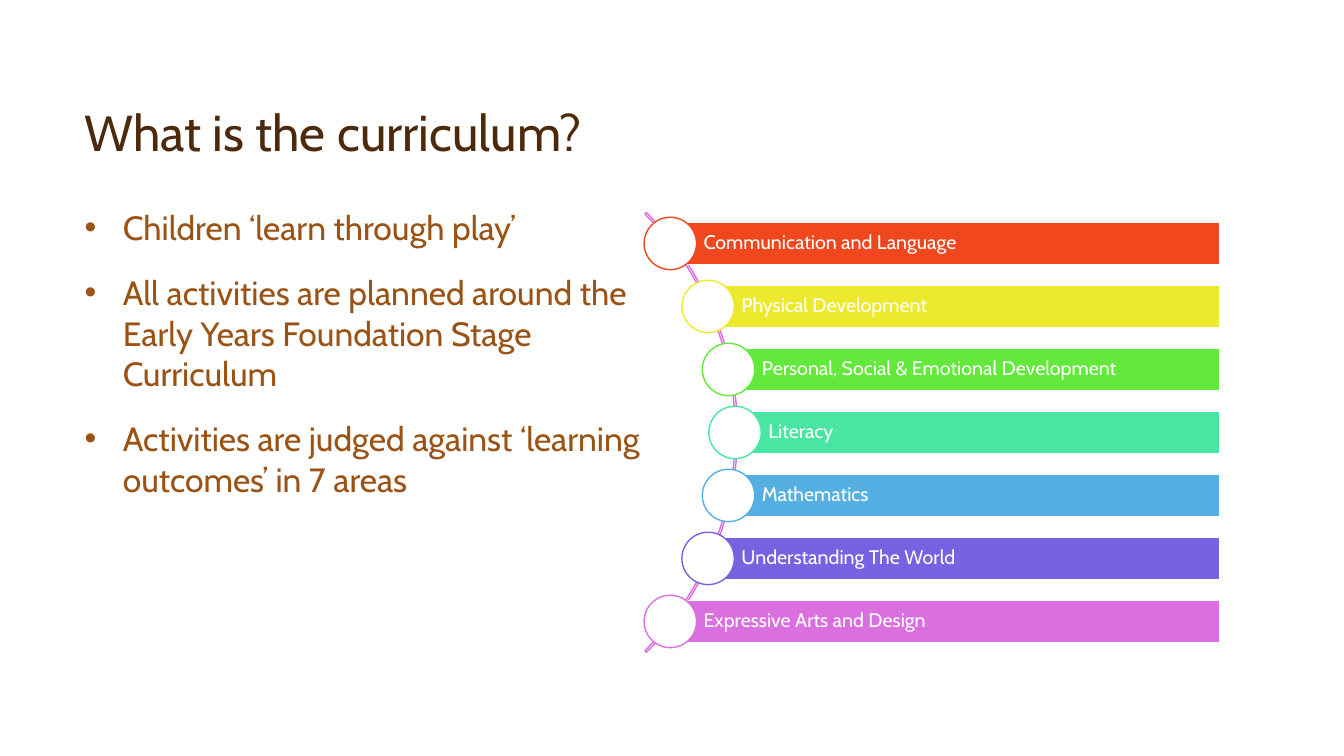
from math import sqrt
from lxml.etree import SubElement
from pptx import Presentation
from pptx.dml.color import RGBColor
from pptx.enum.shapes import MSO_SHAPE as SHAPE
from pptx.enum.text import MSO_ANCHOR as ANCHOR, PP_ALIGN as ALIGN
from pptx.oxml.ns import qn
from pptx.util import Inches, Pt

WHITE = RGBColor(0xFF, 0xFF, 0xFF)
DARK_BROWN = RGBColor(0x4D, 0x2A, 0x0B)
BROWN = RGBColor(0x9A, 0x53, 0x15)
RED = RGBColor(0xF1, 0x47, 0x1F)
YELLOW = RGBColor(0xED, 0xEA, 0x2D)
GREEN = RGBColor(0x62, 0xE9, 0x3B)
MINT = RGBColor(0x49, 0xE6, 0xA3)
BLUE = RGBColor(0x56, 0xAF, 0xE3)
VIOLET = RGBColor(0x77, 0x63, 0xE1)
PINK = RGBColor(0xDA, 0x6F, 0xDF)

prs = Presentation()
prs.slide_width, prs.slide_height = Inches(13.33), Inches(7.5)
s = prs.slides.add_slide(prs.slide_layouts[6])


def add_shape(kind, box, fill, line):
    sp = s.shapes.add_shape(kind, *map(Inches, box))
    sp.shadow.inherit = False
    if fill is None:
        sp.fill.background()
    else:
        sp.fill.solid()
        sp.fill.fore_color.rgb = fill
    sp.line.color.rgb = line
    sp.line.width = Pt(1)
    return sp


def write(p, text, size, color):
    r = p.add_run()
    r.text = text
    for name, value in {"name": "Cabin", "size": Pt(size)}.items():
        setattr(r.font, name, value)
    r.font.color.rgb = color


# Title
LEFT = 0.74
tf = s.shapes.add_textbox(*map(Inches, (LEFT, 0.33, 11.43, 1.33))).text_frame
tf.word_wrap = True
tf.vertical_anchor = ANCHOR.BOTTOM
tf.paragraphs[0].line_spacing = 0.9
write(tf.paragraphs[0], "What is the curriculum?", 36, DARK_BROWN)

# Bullet list
points = [
    "Children ‘learn through play’",
    "All activities are planned around the Early Years Foundation Stage Curriculum",
    "Activities are judged against ‘learning outcomes’ in 7 areas",
]
tf = s.shapes.add_textbox(*map(Inches, (LEFT, 2, 5.84, 4.58))).text_frame
tf.word_wrap = True
for i, point in enumerate(points):
    p = tf.add_paragraph() if i else tf.paragraphs[0]
    if i:
        p.space_before = Pt(18)
    pPr = p._p.get_or_add_pPr()
    pPr.set("marL", str(Inches(0.38)))
    pPr.set("indent", str(-Inches(0.38)))
    SubElement(pPr, qn("a:buFont"), typeface="Arial")
    SubElement(pPr, qn("a:buChar"), char="•")
    write(p, point, 24, BROWN)

# Arc behind the seven areas
CX, CY, ARC = 4.23, 4.29, 6.17
arc = add_shape(SHAPE.BLOCK_ARC, (CX - ARC / 2, CY - ARC / 2, ARC, ARC), None, PINK)
for i, value in enumerate((189, 27, 0.0035)):
    arc.adjustments[i] = value

# Seven areas: each bar starts at the centre of a dot on the arc
areas = [
    ("Communication and Language", RED),
    ("Physical Development", YELLOW),
    ("Personal, Social & Emotional Development", GREEN),
    ("Literacy", MINT),
    ("Mathematics", BLUE),
    ("Understanding The World", VIOLET),
    ("Expressive Arts and Design", PINK),
]
RADIUS, PITCH, BAR, DOT, RIGHT = 3.06, 0.625, 0.42, 0.52, 12.1
for i, (area, color) in enumerate(areas):
    dy = (i - len(areas) // 2) * PITCH
    x, y = CX + sqrt(RADIUS ** 2 - dy ** 2), CY + dy
    bar = add_shape(SHAPE.RECTANGLE, (x, y - BAR / 2, RIGHT - x, BAR), color, WHITE)
    tf = bar.text_frame
    margins = {"margin_left": 0.33, "margin_top": 0.04,
               "margin_right": 0.04, "margin_bottom": 0.04}
    for name, value in margins.items():
        setattr(tf, name, Inches(value))
    tf.word_wrap = True
    tf.vertical_anchor = ANCHOR.MIDDLE
    p = tf.paragraphs[0]
    p.alignment = ALIGN.LEFT
    p.line_spacing = 0.9
    write(p, area, 14, WHITE)
    add_shape(SHAPE.OVAL, (x - DOT / 2, y - DOT / 2, DOT, DOT), WHITE, color)

prs.save("out.pptx")
